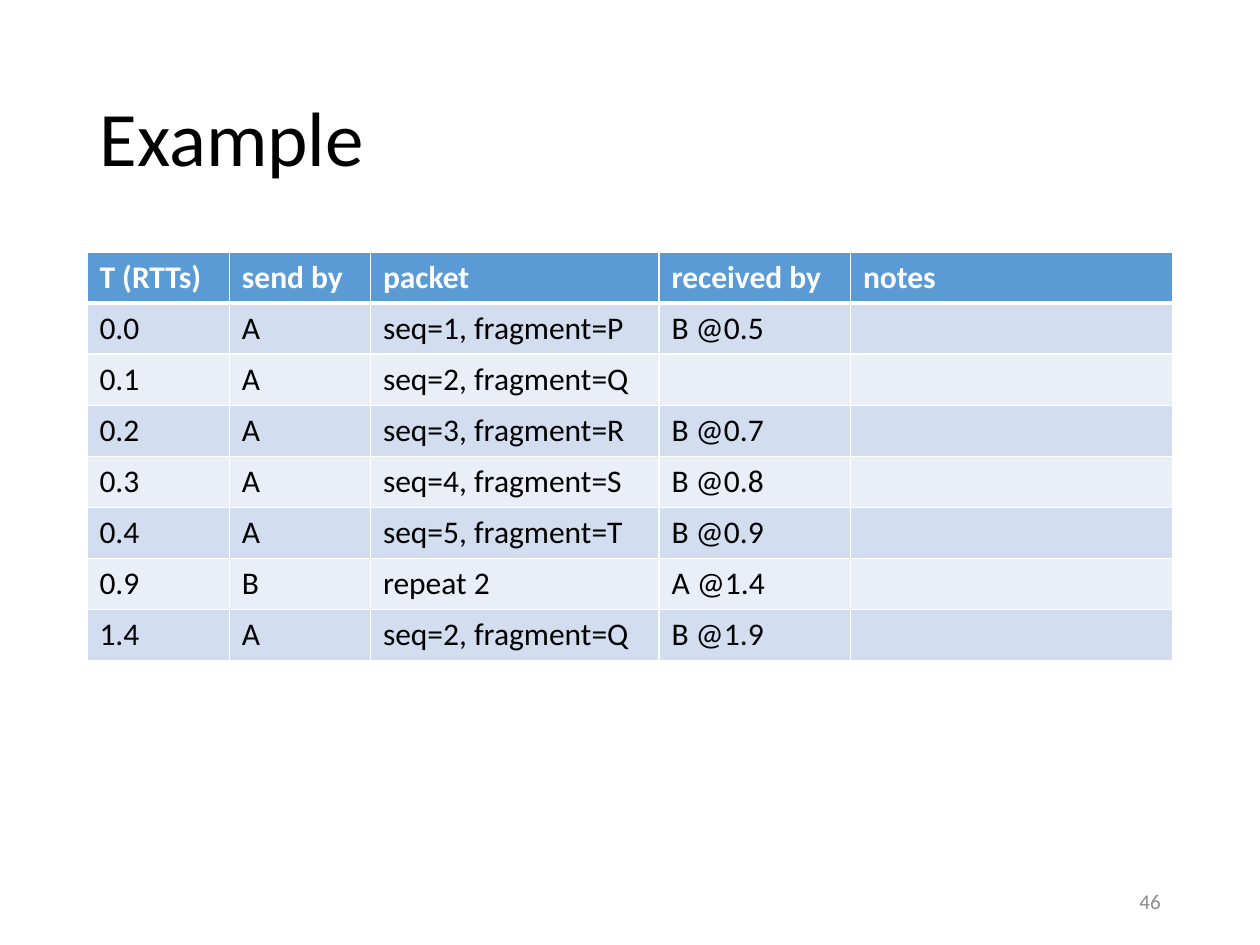
from lxml import etree
from pptx import Presentation
from pptx.dml.color import RGBColor
from pptx.enum import text
from pptx.oxml import ns
from pptx.util import Inches, Pt

BLACK = RGBColor(0x00, 0x00, 0x00)
WHITE = RGBColor(0xFF, 0xFF, 0xFF)
GREY = RGBColor(0x8C, 0x8C, 0x8C)
HEADER_BLUE = RGBColor(0x5B, 0x9B, 0xD5)
BANDS = (RGBColor(0xEA, 0xEF, 0xF7), RGBColor(0xD2, 0xDE, 0xEF))
FONT = "Calibri"
LEFT, WIDTH = 0.69, 8.62
ROW_HEIGHT = 0.405
COLUMN_WIDTHS = (1.13, 1.12, 2.29, 1.52, 2.56)
EXCHANGE = (
    ("T (RTTs)", "send by", "packet", "received by", "notes"),
    ("0.0", "A", "seq=1, fragment=P", "B @0.5", ""),
    ("0.1", "A", "seq=2, fragment=Q", "", ""),
    ("0.2", "A", "seq=3, fragment=R", "B @0.7", ""),
    ("0.3", "A", "seq=4, fragment=S", "B @0.8", ""),
    ("0.4", "A", "seq=5, fragment=T", "B @0.9", ""),
    ("0.9", "B", "repeat 2", "A @1.4", ""),
    ("1.4", "A", "seq=2, fragment=Q", "B @1.9", ""),
)


def add_run(paragraph, wording, size, color, bold=False):
    run = paragraph.add_run()
    run.text = wording
    run.font.name = FONT
    run.font.size = Pt(size)
    run.font.bold = bold
    run.font.color.rgb = color


def add_title(slide, wording):
    title = slide.shapes.title
    title.left, title.top = Inches(LEFT), Inches(0.4)
    title.width, title.height = Inches(WIDTH), Inches(1.45)
    title.text_frame.vertical_anchor = text.MSO_ANCHOR.MIDDLE
    heading = title.text_frame.paragraphs[0]
    heading.alignment = text.PP_ALIGN.LEFT
    heading.line_spacing = 0.9
    add_run(heading, wording, 44, BLACK)


def set_borders(cell, top, bottom):
    properties = cell._tc.get_or_add_tcPr()
    for side, width in (("L", 1), ("R", 1), ("T", top), ("B", bottom)):
        line = etree.SubElement(properties, ns.qn(f"a:ln{side}"), w=str(Pt(width)))
        fill = etree.SubElement(line, ns.qn("a:solidFill"))
        etree.SubElement(fill, ns.qn("a:srgbClr"), val=str(WHITE))


def fill_cell(cell, wording, row):
    is_header = row == 0
    set_borders(cell, 3 if row == 1 else 1, 3 if is_header else 1)
    cell.fill.solid()
    cell.fill.fore_color.rgb = HEADER_BLUE if is_header else BANDS[row % 2]
    if wording:
        color = WHITE if is_header else BLACK
        add_run(cell.text_frame.paragraphs[0], wording, 18, color, is_header)


def add_exchange_table(slide):
    frame = slide.shapes.add_table(
        len(EXCHANGE), len(COLUMN_WIDTHS), Inches(LEFT), Inches(2),
        Inches(WIDTH), Inches(ROW_HEIGHT * len(EXCHANGE)))
    table = frame.table
    for column, width in zip(table.columns, COLUMN_WIDTHS):
        column.width = Inches(width)
    for row, entries in enumerate(EXCHANGE):
        table.rows[row].height = Inches(ROW_HEIGHT)
        for column, wording in enumerate(entries):
            fill_cell(table.cell(row, column), wording, row)


def add_page_number(slide, number):
    box = slide.shapes.add_textbox(Inches(7.06), Inches(6.95), Inches(2.25), Inches(0.4))
    box.text_frame.word_wrap = True
    box.text_frame.vertical_anchor = text.MSO_ANCHOR.MIDDLE
    line = box.text_frame.paragraphs[0]
    line.alignment = text.PP_ALIGN.RIGHT
    add_run(line, number, 12, GREY)


def main():
    deck = Presentation()
    deck.slide_width, deck.slide_height = Inches(10), Inches(7.5)
    slide = deck.slides.add_slide(deck.slide_layouts[5])
    add_title(slide, "Example")
    add_exchange_table(slide)
    add_page_number(slide, "46")
    deck.save("out.pptx")


if __name__ == "__main__":
    main()
